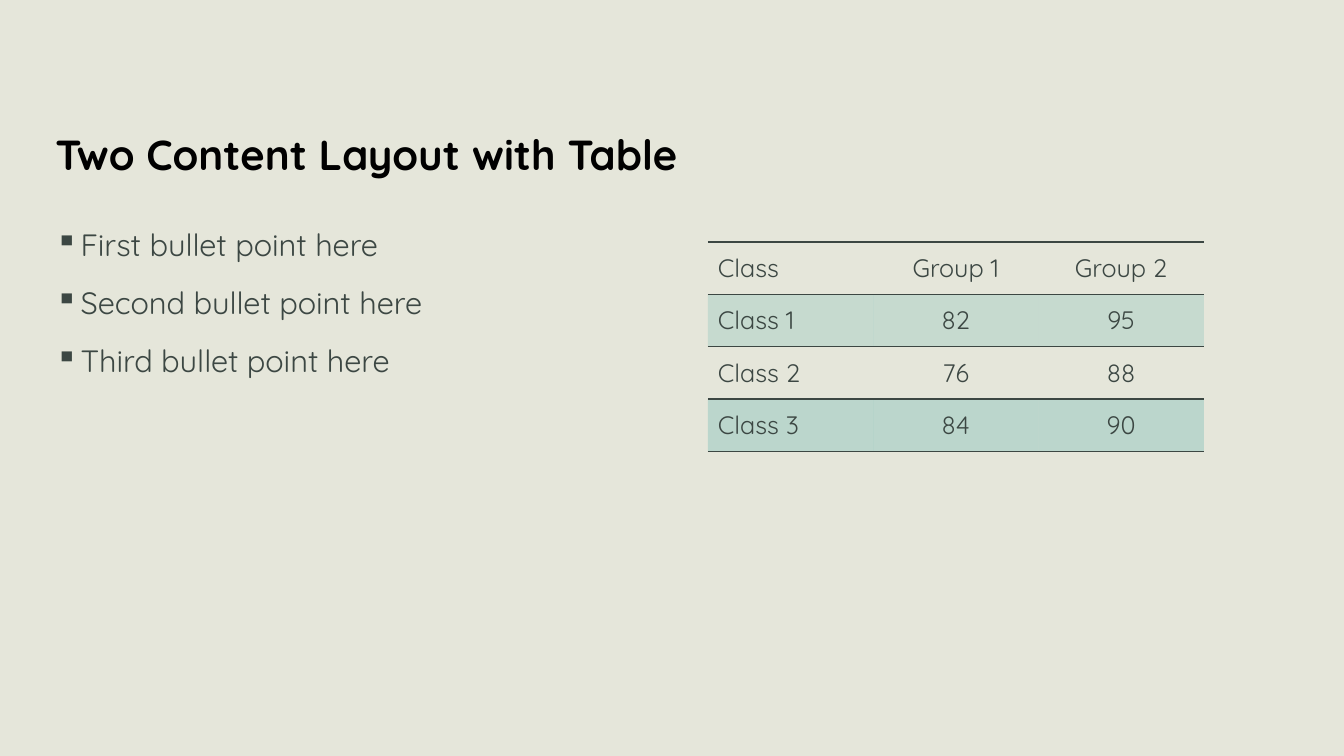
from dataclasses import dataclass

from lxml.etree import SubElement
from pptx import Presentation
from pptx.dml.color import RGBColor
from pptx.enum.text import MSO_ANCHOR, PP_ALIGN
from pptx.oxml import parse_xml
from pptx.oxml.ns import nsdecls, qn
from pptx.util import Inches, Pt


@dataclass(frozen=True)
class Theme:
    font: str = "Quicksand"
    background: str = "E5E6DA"
    title_color: str = "000000"
    text_color: str = "3C4743"
    band_color: str = "159895"
    title_size: int = 30
    body_size: int = 22
    table_size: int = 18
    rule_width: int = 1


class SlideBuilder:
    def __init__(self, page, theme):
        self.page = page
        self.theme = theme
        fill = page.background.fill
        fill.solid()
        fill.fore_color.rgb = RGBColor.from_string(theme.background)

    def style(self, para, size, color, bold=False):
        for span in para.runs:
            span.font.name = self.theme.font
            span.font.size = Pt(size)
            span.font.bold = bold
            span.font.color.rgb = RGBColor.from_string(color)

    def text_box(self, left, top, width, height, anchor):
        box = self.page.shapes.add_textbox(
            Inches(left), Inches(top), Inches(width), Inches(height))
        frame = box.text_frame
        frame.word_wrap = True
        frame.vertical_anchor = anchor
        return frame

    def title(self, text, left, top, width, height):
        frame = self.text_box(left, top, width, height, MSO_ANCHOR.MIDDLE)
        frame.text = text
        para = frame.paragraphs[0]
        para.line_spacing = 0.95
        self.style(para, self.theme.title_size, self.theme.title_color, bold=True)

    def bullets(self, items, left, top, width, height):
        frame = self.text_box(left, top, width, height, MSO_ANCHOR.TOP)
        frame.text = "\n".join(items)
        for index, para in enumerate(frame.paragraphs):
            properties = para._p.get_or_add_pPr()
            properties.set("marL", str(Inches(0.25)))
            properties.set("indent", str(-Inches(0.25)))
            SubElement(properties, qn("a:buChar"), char="▪")
            if index:
                para.space_before = Pt(15)
            self.style(para, self.theme.body_size, self.theme.text_color)

    def rule(self, cell, edge):
        # Borders come before the fill in the cell properties
        line = parse_xml(
            f'<a:{edge} {nsdecls("a")} w="{Pt(self.theme.rule_width)}"><a:solidFill>'
            f'<a:srgbClr val="{self.theme.text_color}"/></a:solidFill></a:{edge}>')
        cell._tc.get_or_add_tcPr().insert(0, line)

    def band(self, cell, opacity):
        if not opacity:
            cell.fill.background()
            return
        cell.fill.solid()
        cell.fill.fore_color.rgb = RGBColor.from_string(self.theme.band_color)
        color = cell._tc.tcPr.find(".//" + qn("a:srgbClr"))
        SubElement(color, qn("a:alpha"), val=str(opacity * 1000))

    def table(self, rows, opacities, rules, left, top, column_width, row_height):
        column_count = len(rows[0])
        frame = self.page.shapes.add_table(
            len(rows), column_count, Inches(left), Inches(top),
            Inches(column_width * column_count), Inches(row_height * len(rows)))
        table = frame.table
        table.first_row = table.horz_banding = False
        # Plain table style without a grid
        style_id = table._tbl.tblPr.find(qn("a:tableStyleId"))
        style_id.text = "{2D5ABB26-0587-4C30-8999-92F81FD0307C}"
        for column in table.columns:
            column.width = Inches(column_width)
        for r, values in enumerate(rows):
            table.rows[r].height = Inches(row_height)
            for c, value in enumerate(values):
                cell = table.cell(r, c)
                cell.text = value
                cell.vertical_anchor = MSO_ANCHOR.MIDDLE
                para = cell.text_frame.paragraphs[0]
                para.alignment = PP_ALIGN.CENTER if c else PP_ALIGN.LEFT
                self.style(para, self.theme.table_size, self.theme.text_color)
                self.band(cell, opacities[r])
                for edge in rules[r]:
                    self.rule(cell, edge)


def main():
    deck = Presentation()
    deck.slide_width, deck.slide_height = Inches(13.33), Inches(7.5)
    page = deck.slides.add_slide(deck.slide_layouts[6])
    builder = SlideBuilder(page, Theme())

    # Title
    builder.title("Two Content Layout with Table", 0.45, 1.09, 12.51, 0.91)

    # Left content
    builder.bullets(
        ["First bullet point here", "Second bullet point here", "Third bullet point here"],
        0.45, 2.19, 6.22, 4.84)

    # Right content: scores by class, with rules and tinted bands
    builder.table(
        rows=[("Class", "Group 1", "Group 2"),
              ("Class 1", "82", "95"),
              ("Class 2", "76", "88"),
              ("Class 3", "84", "90")],
        opacities=[0, 15, 0, 20],
        rules=[["lnT"], ["lnT"], ["lnT"], ["lnB"]],
        left=7.02, top=2.4, column_width=1.64, row_height=0.52)

    deck.save("out.pptx")


if __name__ == "__main__":
    main()
